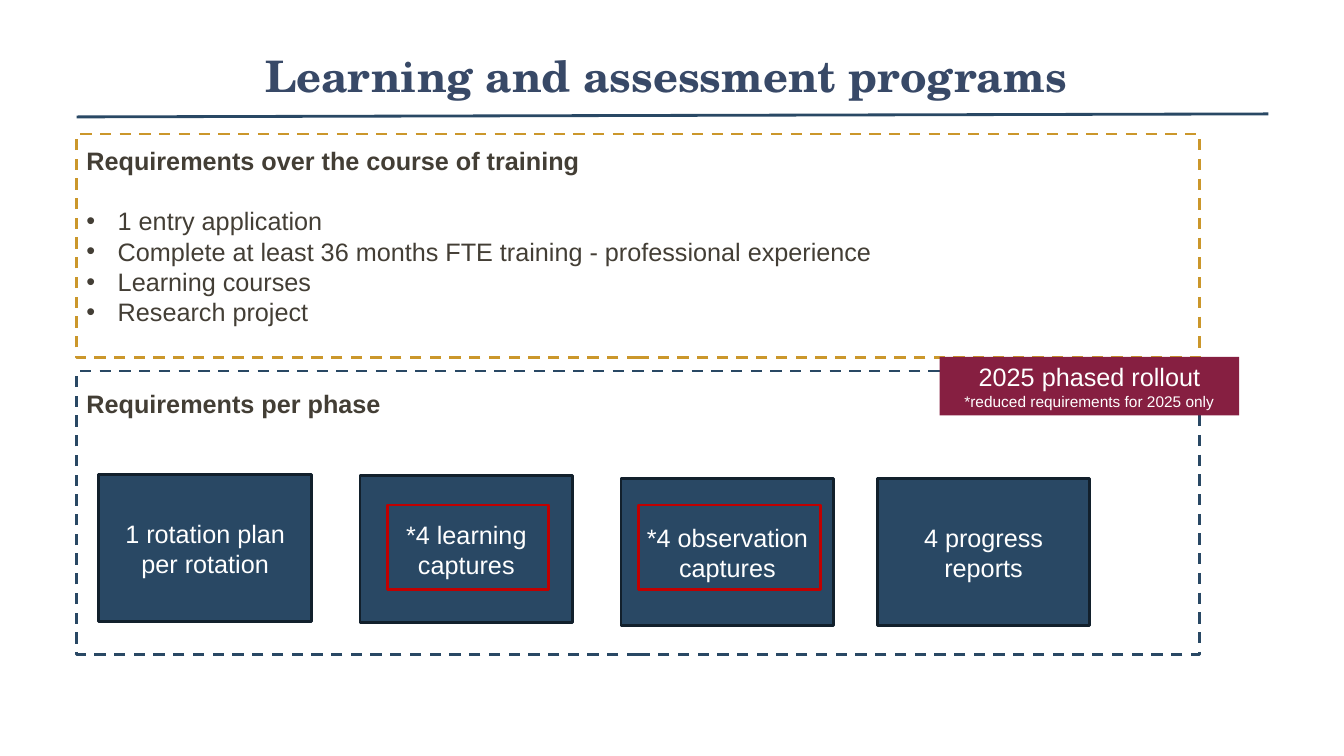
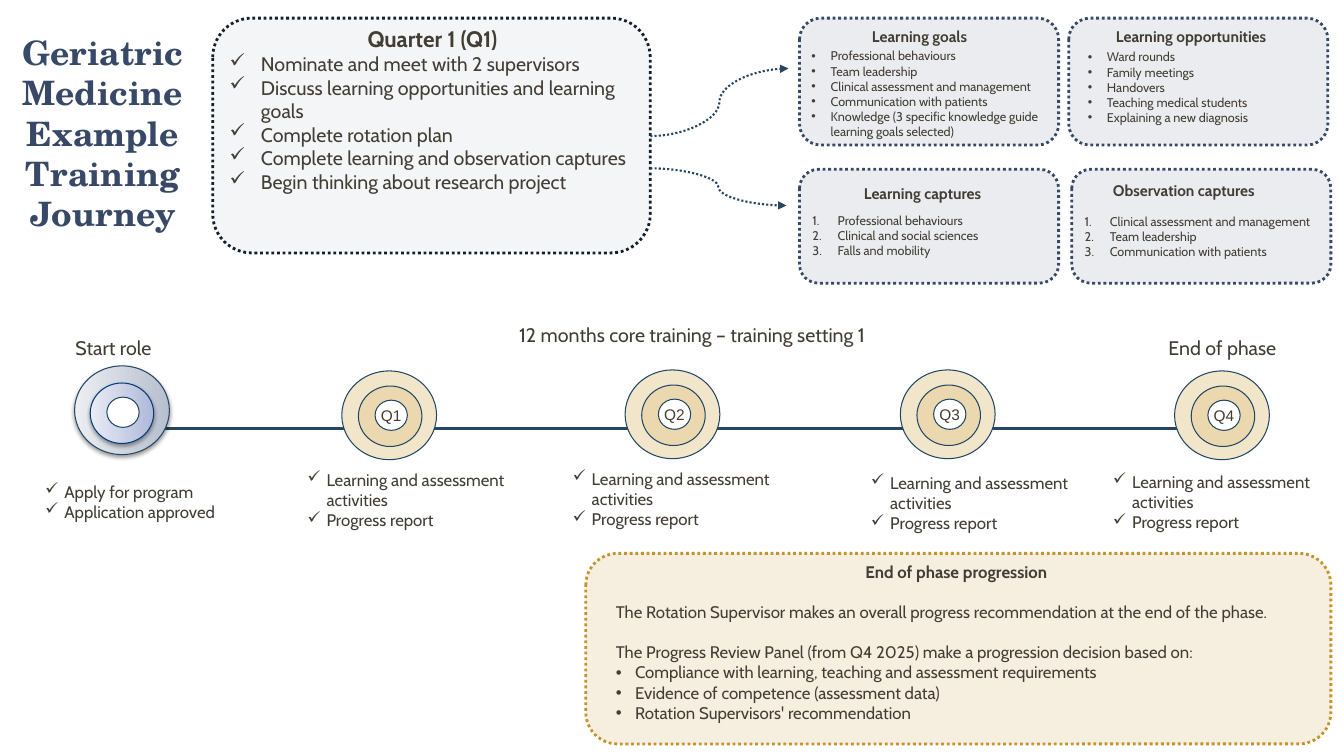
from lxml.etree import SubElement
from pptx import Presentation
from pptx.dml.color import RGBColor
from pptx.enum.dml import MSO_LINE
from pptx.enum.shapes import MSO_CONNECTOR, MSO_SHAPE
from pptx.enum.text import MSO_ANCHOR, PP_ALIGN
from pptx.oxml.ns import qn
from pptx.util import Inches, Pt

NAVY, INK, GOLD, SLATE = "294864", "433E35", "C5932B", "384965"
EDGE, TRACK, RING, RED = "12202C", "274663", "204666", "C00000"
CENTER, DOT = PP_ALIGN.CENTER, MSO_LINE.ROUND_DOT
RECT, ROUND, OVAL = MSO_SHAPE.RECTANGLE, MSO_SHAPE.ROUNDED_RECTANGLE, MSO_SHAPE.OVAL

ARIAL = {"name": "Arial", "size": Pt(18), "color": INK}
WHITE = {**ARIAL, "color": "FFFFFF"}
CABIN = {"name": "Cabin", "size": Pt(12), "color": INK}
LABEL = {**CABIN, "size": Pt(14)}
CARD_HEAD = {**CABIN, "size": Pt(11), "bold": True}
CARD_ITEM = {**CABIN, "size": Pt(9)}
TITLE = {"name": "TeX Gyre Schola", "color": "384967", "bold": True}


def rgb(value):
    return RGBColor.from_string(value)


def para(text, font, **options):
    """Describe a paragraph; options are align, before, bullet and indent."""
    return text, font, options


def bullets(items, font, bullet, indent=0.19):
    return [para(item, font, bullet=bullet, indent=indent) for item in items]


class Deck:
    """Holds the presentation, the current slide and the drawing style."""

    def __init__(self):
        self.prs = Presentation()
        self.prs.slide_width, self.prs.slide_height = Inches(13.33), Inches(7.5)
        self.s = None

    def slide(self):
        self.s = self.prs.slides.add_slide(self.prs.slide_layouts[6])

    def style_line(self, line, color, width, dash=None):
        line.color.rgb = rgb(color)
        line.width = Pt(width)
        if dash:
            line.dash_style = dash

    def set_text(self, tf, paras, anchor=MSO_ANCHOR.TOP, wrap=True, inset=(0.1, 0.05)):
        x, y = (Inches(v) for v in inset)
        frame = {"word_wrap": wrap, "vertical_anchor": anchor, "margin_left": x,
                 "margin_right": x, "margin_top": y, "margin_bottom": y}
        for key, value in frame.items():
            setattr(tf, key, value)
        for i, (text, font, options) in enumerate(paras):
            p = tf.add_paragraph() if i else tf.paragraphs[0]
            if "bullet" in options:
                self.bullet(p, options["bullet"], options["indent"])
            p.alignment = options.get("align", PP_ALIGN.LEFT)
            if "before" in options:
                p.space_before = Pt(options["before"])
            r = p.add_run()
            r.text = text
            for key, value in font.items():
                if key == "color":
                    r.font.color.rgb = rgb(value)
                else:
                    setattr(r.font, key, value)

    def bullet(self, p, mark, indent):
        pPr = p._p.get_or_add_pPr()
        pPr.set("marL", str(Inches(indent)))
        pPr.set("indent", str(-Inches(indent)))
        if mark == "1.":
            SubElement(pPr, qn("a:buAutoNum"), type="arabicPeriod")
        else:
            if mark == "•":
                SubElement(pPr, qn("a:buFont"), typeface="Arial")
            SubElement(pPr, qn("a:buChar"), char=mark)

    def text(self, box, paras, **frame):
        tb = self.s.shapes.add_textbox(*(Inches(v) for v in box))
        self.set_text(tb.text_frame, paras, **frame)

    def title(self, box, text, size):
        self.text(box, [para(text, {**TITLE, "size": Pt(size)}, align=CENTER)],
                  anchor=MSO_ANCHOR.MIDDLE, inset=(0.07, 0.04))

    def shape(self, kind, box, fill=None, line=None, alpha=None, paras=(), **frame):
        """Add a preset shape; line is (colour, width[, dash]), alpha a percentage."""
        sp = self.s.shapes.add_shape(kind, *(Inches(v) for v in box))
        sp.shadow.inherit = False
        if fill:
            sp.fill.solid()
            sp.fill.fore_color.rgb = rgb(fill)
        else:
            sp.fill.background()
        if alpha:
            color = sp._element.spPr.find(qn("a:solidFill"))[0]
            SubElement(color, qn("a:alpha"), val=str(alpha * 1000))
        if line:
            self.style_line(sp.line, *line)
        else:
            sp.line.fill.background()
        if paras:
            self.set_text(sp.text_frame, paras, anchor=MSO_ANCHOR.MIDDLE, **frame)
        return sp

    def oval(self, cx, cy, w, h, fill=None, line=RING, **options):
        return self.shape(OVAL, (cx - w / 2, cy - h / 2, w, h), fill, (line, 0.75), **options)

    def glow_oval(self, cx, cy, w, h, dark, light, line):
        """Add an ellipse with a gradient and a soft shadow."""
        sp = self.oval(cx, cy, w, h, line=line)
        sp.fill.gradient()
        sp.fill.gradient_angle = 180
        for stop, color, position in zip(sp.fill.gradient_stops, (dark, light), (0, 1)):
            stop.color.rgb = rgb(color)
            stop.position = position
        effects = sp._element.spPr.find(qn("a:effectLst"))
        shadow = SubElement(effects, qn("a:outerShdw"), blurRad=str(Pt(3.1)),
                            dist=str(Pt(1.6)), dir="5400000", rotWithShape="0")
        color = SubElement(shadow, qn("a:srgbClr"), val="000000")
        SubElement(color, qn("a:alpha"), val="38000")

    def line(self, ends, color, width, dash=None, kind=MSO_CONNECTOR.STRAIGHT, arrow=False):
        c = self.s.shapes.add_connector(kind, *(Inches(v) for v in ends))
        self.style_line(c.line, color, width, dash)
        spPr = c._element.spPr
        if arrow:
            SubElement(spPr.find(qn("a:ln")), qn("a:tailEnd"), type="triangle")
        SubElement(spPr, qn("a:effectLst"))


def programs_slide(d):
    d.slide()
    d.title((1.6, 0.29, 10.01, 0.91), "Learning and assessment programs", 31)
    d.line((0.76, 1.16, 12.58, 1.13), NAVY, 2)
    for y, h, color in ((1.33, 2.22, "CB972B"), (3.68, 2.81, NAVY)):
        d.shape(RECT, (0.76, y, 11.14, h), line=(color, 2, MSO_LINE.DASH))

    heading = {**ARIAL, "bold": True}
    first, *rest = (
        "1 entry application",
        "Complete at least 36 months FTE training - professional experience",
        "Learning courses", "Research project")
    d.text((0.76, 1.39, 9.84, 1.92), [
        para("Requirements over the course of training", heading),
        para(first, ARIAL, bullet="•", indent=0.31, before=21.7),
        *bullets(rest, ARIAL, "•", 0.31)])
    d.text((0.76, 3.8, 6.67, 0.4), [para("Requirements per phase", heading)])

    for x, y, text in ((0.98, 4.71, "1 rotation plan per rotation"),
                       (3.57, 4.72, "*4 learning captures"),
                       (6.16, 4.75, "*4 observation captures"),
                       (8.7, 4.75, "4 progress reports")):
        d.shape(RECT, (x, y, 2.11, 1.46), NAVY, (EDGE, 2),
                paras=[para(text, WHITE, align=CENTER)])
    for x, w in ((3.84, 1.6), (6.33, 1.81)):
        d.shape(RECT, (x, 5.01, w, 0.84), line=(RED, 2))
    d.shape(RECT, (9.32, 3.54, 2.97, 0.58), "861F41", paras=[
        para("2025 phased rollout", WHITE, align=CENTER),
        para("*reduced requirements for 2025 only", {**WHITE, "size": Pt(11)}, align=CENTER)])


def timeline(d):
    d.line((0.9, 4.25, 12.34, 4.25), TRACK, 2.25)
    d.glow_oval(1.21, 4.07, 0.94, 0.88, "B6BFCE", "ECEEF2", TRACK)
    d.glow_oval(1.21, 4.1, 0.63, 0.6, "AFB8D9", "EAECF5", "003C76")
    d.oval(1.22, 4.09, 0.32, 0.3, "FFFFFF")

    tasks = ("Learning and assessment activities", "Progress report")
    quarters = ((3.86, 4.12, 2.95, 4.61, 2.41), (6.67, 4.11, 5.58, 4.6, 2.32),
                (9.4, 4.11, 8.54, 4.64, 2.32), (12.12, 4.12, 10.94, 4.63, 2.57))
    for n, (cx, cy, x, y, w) in enumerate(quarters, 1):
        d.oval(cx, cy, 0.94, 0.88, "F2E6CA")
        d.oval(cx + 0.01, cy + 0.01, 0.63, 0.6, "D3A440", alpha=20)
        d.oval(cx + 0.02, cy, 0.32, 0.3, "FFFFFF", wrap=False, inset=(0, 0),
               paras=[para(f"Q{n}", {**ARIAL, "size": Pt(11)}, align=CENTER)])
        d.text((x, y, w, 0.71), bullets(tasks, CABIN, "✓"))
    d.text((0.35, 4.73, 2.16, 0.5),
           bullets(("Apply for program", "Application approved"), CABIN, "✓"))

    for x, y, w, text in ((0.65, 3.28, 0.97, "Start role"),
                          (11.49, 3.28, 1.35, "End of phase"),
                          (5.05, 3.15, 3.76, "12 months core training – training setting 1")):
        d.text((x, y, w, 0.34), [para(text, LABEL)], wrap=False)


def cards(d):
    """Add the four cards of goals, opportunities and captures."""
    data = (
        (7.93, 0.18, 1.26, "Learning goals", (8.55, 0.22, 1.22), (7.95, 0.43, 2.68, 1.01), "•",
         ("Professional behaviours", "Team leadership", "Clinical assessment and management",
          "Communication with patients",
          "Knowledge (3 specific knowledge guide learning goals selected)")),
        (10.6, 0.18, 1.26, "Learning opportunities", (10.97, 0.22, 1.83),
         (10.69, 0.44, 2.28, 0.86), "•",
         ("Ward rounds", "Family meetings", "Handovers", "Teaching medical students",
          "Explaining a new diagnosis")),
        (7.93, 1.68, 1.13, "Learning captures", (8.47, 1.78, 1.49),
         (7.96, 2.06, 2.28, 0.56), "1.",
         ("Professional behaviours", "Clinical and social sciences", "Falls and mobility")),
        (10.63, 1.68, 1.13, "Observation captures", (10.94, 1.75, 1.74),
         (10.66, 2.07, 2.57, 0.71), "1.",
         ("Clinical assessment and management", "Team leadership",
          "Communication with patients")))
    for x, y, h, head, head_at, list_at, mark, items in data:
        d.shape(ROUND, (x, y, 2.57, h), SLATE, (SLATE, 2, DOT), alpha=10)
        d.text((*head_at, 0.29), [para(head, CARD_HEAD)], wrap=False)
        d.text(list_at, bullets(items, CARD_ITEM, mark, 0.25 if mark == "1." else 0.19))


def journey_slide(d):
    d.slide()
    d.title((-0.01, 0.86, 2.06, 0.91), "Geriatric Medicine Example Training Journey", 24)
    timeline(d)
    cards(d)

    d.shape(ROUND, (2.11, 0.18, 4.34, 2.33), SLATE, (EDGE, 2, DOT), alpha=5)
    steps = ("Nominate and meet with 2 supervisors",
             "Discuss learning opportunities and learning goals",
             "Complete rotation plan",
             "Complete learning and observation captures",
             "Begin thinking about research project")
    d.text((2.18, 0.2, 4.22, 2.22), [
        para("Quarter 1 (Q1)", {**CABIN, "size": Pt(16), "bold": True}, align=CENTER),
        *bullets(steps, LABEL, "✓", 0.31)])
    for ends in ((6.45, 1.35, 7.82, 0.68), (6.45, 1.67, 7.8, 2.04)):
        d.line(ends, TRACK, 1.5, DOT, MSO_CONNECTOR.CURVE, arrow=True)

    d.shape(ROUND, (5.81, 5.49, 7.39, 1.89), GOLD, (GOLD, 2, DOT), alpha=15)
    criteria = ("Compliance with learning, teaching and assessment requirements",
                "Evidence of competence (assessment data)",
                "Rotation Supervisors' recommendation")
    d.text((6.01, 5.52, 6.95, 1.72), [
        para("End of phase progression", {**CABIN, "bold": True}, align=CENTER),
        para("The Rotation Supervisor makes an overall progress recommendation "
             "at the end of the phase.", CABIN, before=14.4),
        para("The Progress Review Panel (from Q4 2025) make a progression decision "
             "based on:", CABIN, before=14.4),
        *bullets(criteria, CABIN, "•")])


def main():
    d = Deck()
    programs_slide(d)
    journey_slide(d)
    d.prs.save("out.pptx")


if __name__ == "__main__":
    main()
